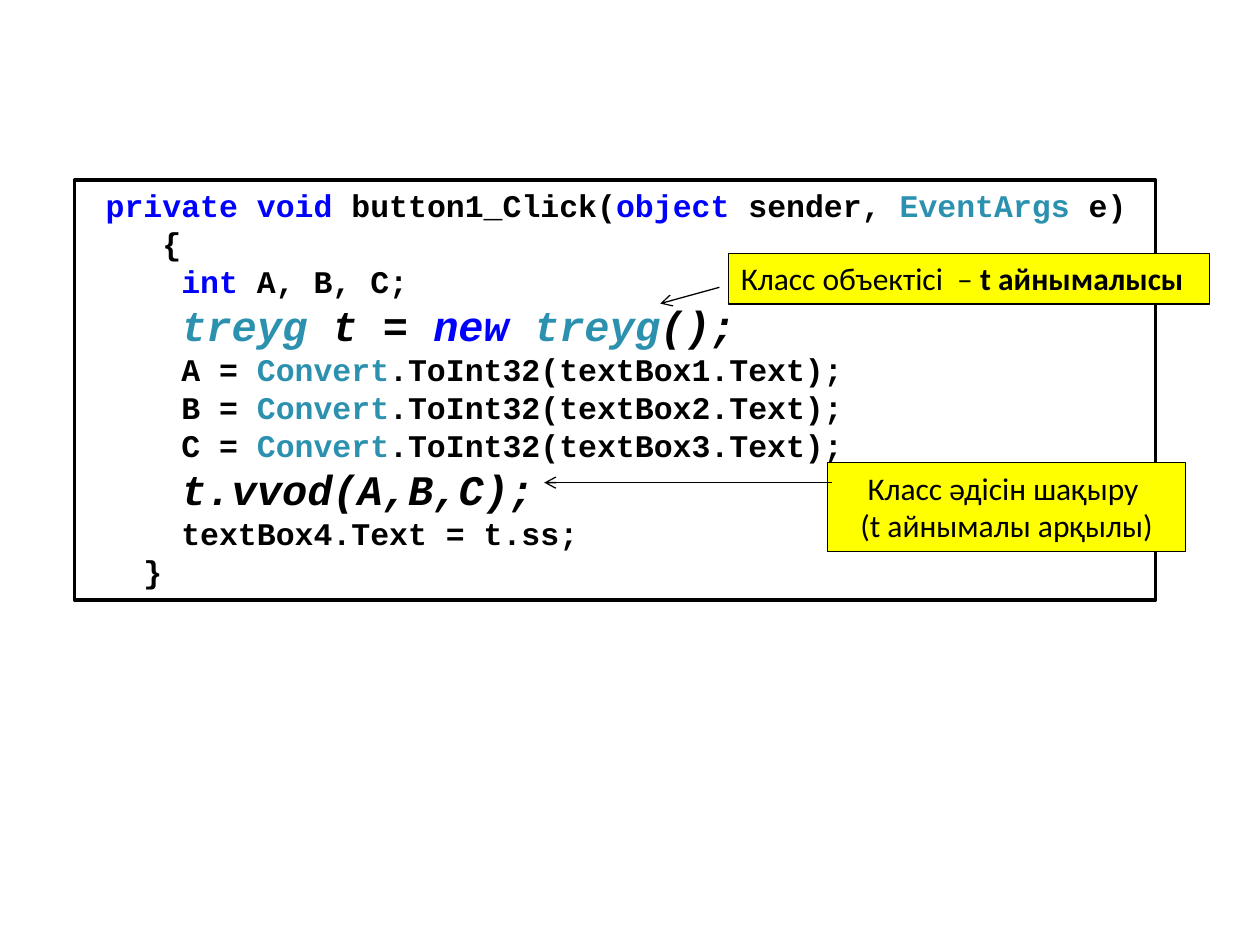
from pptx import Presentation
from pptx.dml.color import RGBColor
from pptx.enum.shapes import MSO_CONNECTOR, MSO_SHAPE
from pptx.enum.text import MSO_ANCHOR, PP_ALIGN
from pptx.oxml.ns import qn
from pptx.util import Pt
from lxml.etree import SubElement

COLORS = {"plain": "000000", "keyword": "0000FF", "type": "2B91AF",
          "paper": "FFFFFF", "note": "FFFF00"}
CODE_FONT = {"name": "Courier New", "size": Pt(18), "bold": True}
CALL_FONT = {"name": "Courier New", "size": Pt(24), "bold": True, "italic": True}
NOTE_FONT = {"name": "Calibri", "size": Pt(18), "bold": False}
STRONG_FONT = {**NOTE_FONT, "bold": True}
CHAR_WIDTH = 10.8


def assignment(name, number):
    return 5, CODE_FONT, [(f"{name} = ", "plain"), ("Convert", "type"),
                          (f".ToInt32(textBox{number}.Text);", "plain")]


CODE = [
    (1, CODE_FONT, [("private void", "keyword"), (" button1_Click(", "plain"),
                    ("object", "keyword"), (" sender, ", "plain"),
                    ("EventArgs", "type"), (" e)", "plain")]),
    (4, CODE_FONT, [("{", "plain")]),
    (5, CODE_FONT, [("int", "keyword"), (" A, B, C;", "plain")]),
    (5, CALL_FONT, [("treyg", "type"), (" t = ", "plain"), ("new ", "keyword"),
                    ("treyg", "type"), ("();", "plain")]),
    *[assignment(name, i) for i, name in enumerate("ABC", 1)],
    (5, CALL_FONT, [("t.vvod(A,B,C);", "plain")]),
    (5, CODE_FONT, [("textBox4.Text = t.ss;", "plain")]),
    (3, CODE_FONT, [("}", "plain")]),
]
NOTES = [
    ((416.2, 144.7, 275, 29), PP_ALIGN.LEFT, False,
     [[("Класс объектісі  – ", NOTE_FONT), ("t айнымалысы", STRONG_FONT)]]),
    ((473, 264.2, 204.5, 51), PP_ALIGN.CENTER, True,
     [[("Класс әдісін шақыру ", NOTE_FONT)], [("(t айнымалы арқылы)", NOTE_FONT)]]),
]
ARROWS = [(411.1, 164.2, 377.3, 173.5), (475.2, 275.8, 311, 275.8)]


def rgb(key):
    return RGBColor.from_string(COLORS[key])


def add_box(s, place, fill, width, wrap=True):
    sp = s.shapes.add_shape(MSO_SHAPE.RECTANGLE, *map(Pt, place))
    sp.shadow.inherit = False
    sp.fill.solid()
    sp.fill.fore_color.rgb = rgb(fill)
    sp.line.color.rgb = rgb("plain")
    sp.line.width = Pt(width)
    tf = sp.text_frame
    tf.word_wrap = wrap
    tf.vertical_anchor = MSO_ANCHOR.TOP
    return tf


def add_paragraph(tf, first, align):
    p = tf.paragraphs[0] if first else tf.add_paragraph()
    p.alignment = align
    return p


def add_run(p, text, font, color="plain"):
    r = p.add_run()
    r.text = text
    r.font.color.rgb = rgb(color)
    for key, value in font.items():
        setattr(r.font, key, value)


def add_arrow(s, ends):
    c = s.shapes.add_connector(MSO_CONNECTOR.STRAIGHT, *map(Pt, ends))
    c.line.color.rgb = rgb("plain")
    c.line.width = Pt(0.75)
    SubElement(c.line._get_or_add_ln(), qn("a:tailEnd"), type="arrow")
    SubElement(c._element.spPr, qn("a:effectLst"))


def main():
    prs = Presentation()
    prs.slide_width, prs.slide_height = Pt(720), Pt(540)
    s = prs.slides.add_slide(prs.slide_layouts[6])

    tf = add_box(s, (42.5, 103, 617.8, 239.8), "paper", 2)
    for i, (indent, font, pieces) in enumerate(CODE):
        p = add_paragraph(tf, i == 0, PP_ALIGN.LEFT)
        p._p.get_or_add_pPr().set("marL", str(Pt(indent * CHAR_WIDTH)))
        for text, color in pieces:
            add_run(p, text, font, color)

    for place, align, wrap, lines in NOTES:
        tf = add_box(s, place, "note", 0.75, wrap)
        for i, pieces in enumerate(lines):
            p = add_paragraph(tf, i == 0, align)
            for text, font in pieces:
                add_run(p, text, font)

    for ends in ARROWS:
        add_arrow(s, ends)
    prs.save("out.pptx")


if __name__ == "__main__":
    main()
